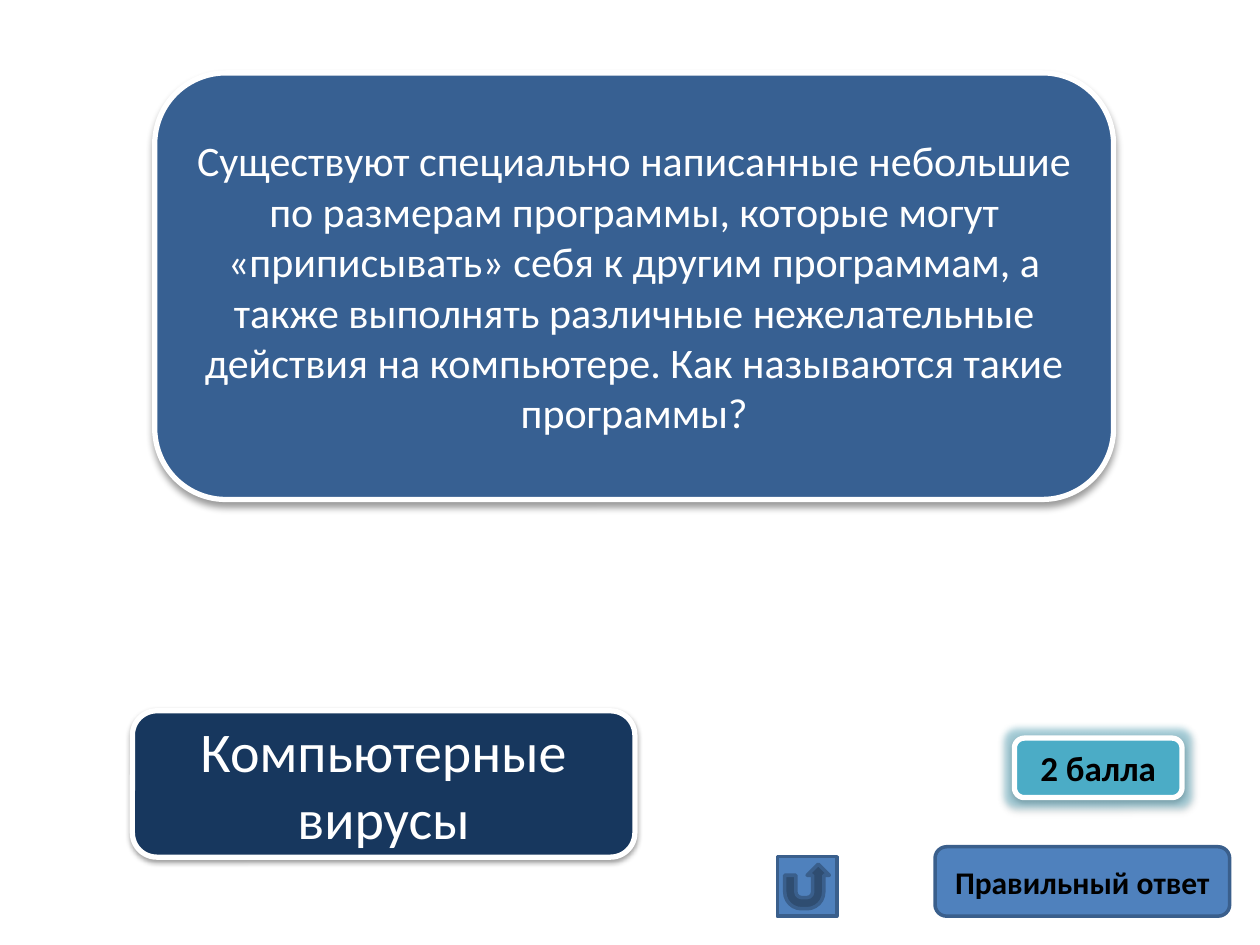
from dataclasses import dataclass

from lxml.etree import SubElement
from pptx import Presentation
from pptx.dml.color import RGBColor as Rgb
from pptx.enum.shapes import MSO_SHAPE as Form
from pptx.enum.text import MSO_ANCHOR as Anchor, PP_ALIGN as Align
from pptx.oxml.ns import qn
from pptx.util import Cm, Pt


@dataclass(frozen=True)
class Theme:
    font: str = "Calibri"
    white: str = "FFFFFF"
    black: str = "000000"
    blue: str = "4F81BD"
    edge: str = "3A5F8C"
    teal: str = "4BACC6"
    navy: str = "17375E"
    panel: str = "376092"
    label: int = 18
    score: int = 20
    body: int = 24
    answer: int = 32


class Deck:
    def __init__(self, theme):
        self.theme = theme
        self.prs = Presentation()
        self.prs.slide_width, self.prs.slide_height = Cm(25.4), Cm(19.05)
        self.slide = self.prs.slides.add_slide(self.prs.slide_layouts[6])

    def shape(self, form, box, fill, line, width):
        item = self.slide.shapes.add_shape(form, *map(Cm, box))
        item.shadow.inherit = False
        item.fill.solid()
        item.fill.fore_color.rgb = Rgb.from_string(fill)
        item.line.color.rgb = Rgb.from_string(line)
        item.line.width = Pt(width)
        return item

    def button(self, form, box):
        return self.shape(form, box, self.theme.blue, self.theme.edge, 2)

    def card(self, box, fill, blur=3.1, drop=1.6, alpha=38, glow=None):
        """Add a white-edged rounded card with a shadow straight below it."""
        item = self.shape(Form.ROUNDED_RECTANGLE, box, fill, self.theme.white, 3)
        if glow:
            self.effect(item, "glow", glow, 40, rad=Pt(8))
        self.effect(item, "outerShdw", self.theme.black, alpha, blurRad=Pt(blur),
                    dist=Pt(drop), dir=90 * 60000, rotWithShape=0)
        return item

    def effect(self, item, kind, color, alpha, **sizes):
        group = item._element.spPr.find(qn("a:effectLst"))
        node = SubElement(group, qn(f"a:{kind}"),
                          {key: str(int(val)) for key, val in sizes.items()})
        tint = SubElement(node, qn("a:srgbClr"), val=color)
        SubElement(tint, qn("a:alpha"), val=str(alpha * 1000))

    def text(self, item, words, size, color, bold=False):
        frame = item.text_frame
        frame.word_wrap = True
        frame.vertical_anchor = Anchor.MIDDLE
        para = frame.paragraphs[0]
        para.text = words
        para.alignment = Align.CENTER
        font = para.font
        font.name, font.size, font.bold = self.theme.font, Pt(size), bold
        font.color.rgb = Rgb.from_string(color)


def main():
    theme = Theme()
    deck = Deck(theme)

    reveal = deck.button(Form.ROUNDED_RECTANGLE, (18.85, 17.07, 5.94, 1.4))
    deck.text(reveal, "Правильный ответ", theme.label, theme.black, bold=True)
    deck.button(Form.ACTION_BUTTON_RETURN, (15.67, 17.27, 1.2, 1.2))

    score = deck.card((20.45, 14.88, 3.38, 1.2), theme.teal, glow=theme.teal)
    deck.text(score, "2 балла", theme.score, theme.black, bold=True)

    answer = deck.card((2.67, 14.33, 10.13, 2.95), theme.navy)
    deck.text(answer, "Компьютерные вирусы", theme.answer, theme.white)

    question = deck.card((3.12, 1.47, 19.33, 8.6), theme.panel,
                         blur=4, drop=3, alpha=40)
    deck.text(question,
              "Существуют специально написанные небольшие по размерам программы, "
              "которые могут «приписывать» себя к другим программам, а также "
              "выполнять различные нежелательные действия на компьютере. "
              "Как называются такие программы?", theme.body, theme.white)

    deck.prs.save("out.pptx")


if __name__ == "__main__":
    main()
